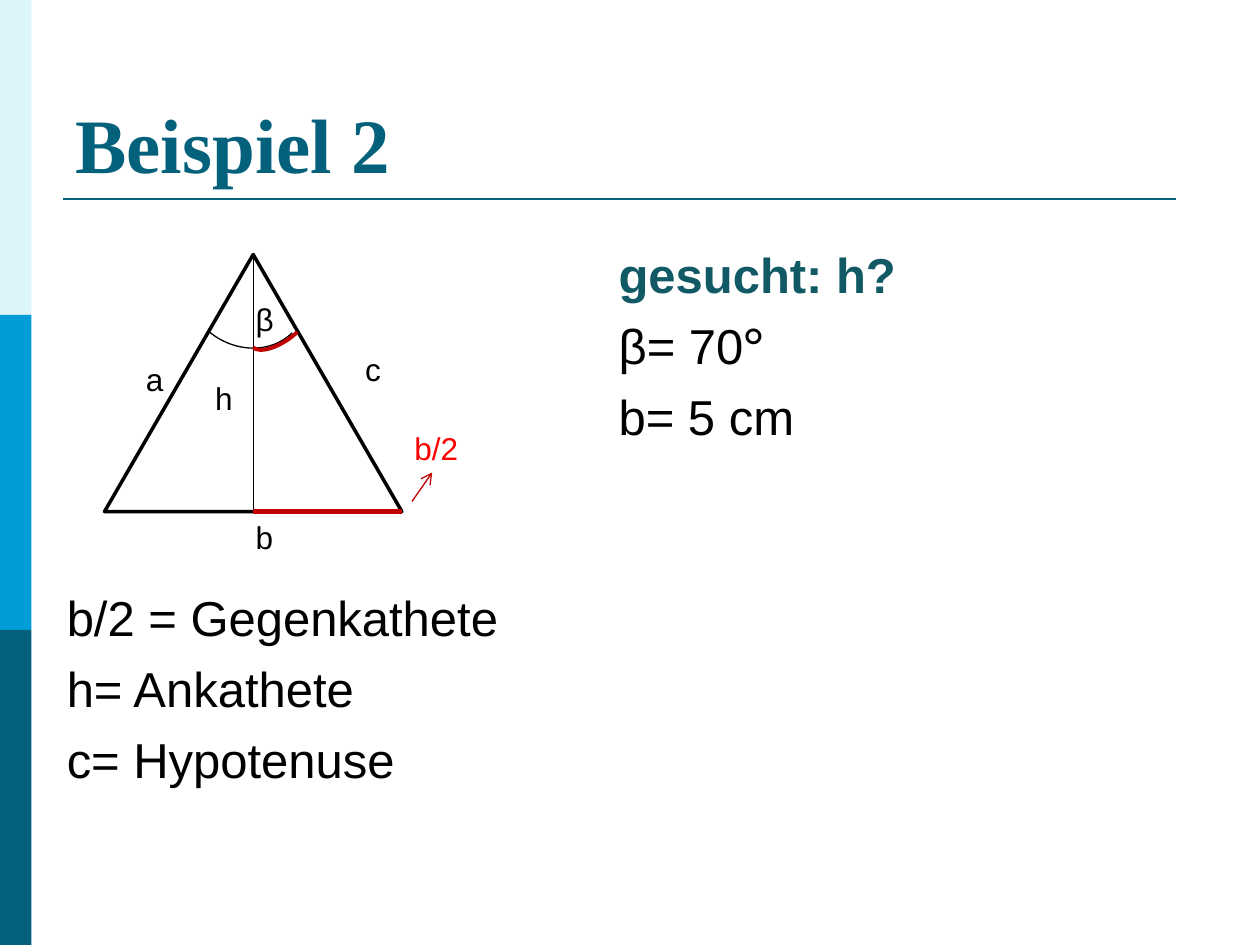
from pptx import Presentation
from pptx.dml.color import RGBColor
from pptx.enum.shapes import MSO_CONNECTOR as Connector, MSO_SHAPE as Shape
from pptx.enum.text import MSO_ANCHOR as Anchor, MSO_AUTO_SIZE as AutoSize, PP_ALIGN as Align
from pptx.oxml.ns import qn
from pptx.util import Inches, Pt
from lxml.etree import SubElement

COLORS = {
    "pale": "DBF5F9", "blue": "009DD9", "petrol": "04617B", "teal": "115964",
    "black": "000000", "dark_red": "C00000", "red": "FF0000",
}
TITLE = "Beispiel 2"
SOUGHT = [
    [("gesucht: h?", {"color": "teal", "bold": True})],
    [("β= 70", {}), ("°", {"font": "Lato"})],
    [("b= 5 cm", {})],
]
SIDES = [[("b/2 = Gegenkathete", {})], [("h= Ankathete", {})], [("c= Hypotenuse", {})]]
LABELS = [
    ("b", 1.93, 4.06, 0.39, "black"),
    ("a", 1.06, 2.81, 0.39, "black"),
    ("c", 2.8, 2.73, 0.39, "black"),
    ("h", 1.61, 2.96, 0.31, "black"),
    ("b/2", 3.19, 3.36, 0.63, "red"),
    ("β", 1.93, 2.33, 0.39, "black"),
]
STRIPES = ["pale", "blue", "petrol"]
LEFT, TOP, WIDTH, HEIGHT = 0.83, 2.02, 2.36, 2.04
MIDDLE, RIGHT, BASE = LEFT + WIDTH / 2, LEFT + WIDTH, TOP + HEIGHT
LINES = [
    ((0.5, 1.58), (9.33, 1.58), "petrol", 1.5, False),
    ((MIDDLE, TOP), (MIDDLE, BASE), "black", 0.75, False),
    ((MIDDLE, BASE), (RIGHT, BASE), "dark_red", 3, False),
    ((3.27, 3.98), (3.43, 3.75), "dark_red", 0.75, True),
]
ARCS = [
    ((1.5, 1.78, 0.9, 1.02), 127.6, (165.61, 1.51), "black", 0.75),
    ((1.95, 2.47, 0.55, 0.24), 144.7, (140.45, 214.47), "dark_red", 2.25),
]


def rgb(name):
    """Return the named colour."""
    return RGBColor.from_string(COLORS[name])


def add_run(paragraph, text, size=28, font="Arial", color="black", bold=False):
    """Add formatted text to a paragraph."""
    run = paragraph.add_run()
    run.text = text
    run.font.size, run.font.name, run.font.bold = Pt(size), font, bold
    run.font.color.rgb = rgb(color)


def place(shape, left, top, width, height):
    """Move and size a shape in inches."""
    shape.left, shape.top = Inches(left), Inches(top)
    shape.width, shape.height = Inches(width), Inches(height)


def fill_list(placeholder, paragraphs, box):
    """Write unbulleted paragraphs into a body placeholder."""
    place(placeholder, *box)
    frame = placeholder.text_frame
    frame.auto_size, frame.vertical_anchor = AutoSize.NONE, Anchor.TOP
    for index, runs in enumerate(paragraphs):
        paragraph = frame.add_paragraph() if index else frame.paragraphs[0]
        paragraph.space_before, paragraph.space_after = Pt(0), Pt(7)
        properties = paragraph._p.get_or_add_pPr()
        properties.set("marL", "0")
        properties.set("indent", "0")
        SubElement(properties, qn("a:buNone"))
        for text, style in runs:
            add_run(paragraph, text, **style)


def add_outline(slide, kind, box, color, width, fill=None):
    """Add a preset shape with an optional fill and outline."""
    shape = slide.shapes.add_shape(kind, *map(Inches, box))
    shape.shadow.inherit = False
    if fill:
        shape.fill.solid()
        shape.fill.fore_color.rgb = rgb(fill)
    else:
        shape.fill.background()
    if color:
        shape.line.color.rgb, shape.line.width = rgb(color), Pt(width)
    else:
        shape.line.fill.background()
    return shape


def add_line(slide, start, end, color, width, arrow):
    """Add a straight line, with an arrowhead if asked."""
    line = slide.shapes.add_connector(Connector.STRAIGHT, *map(Inches, start + end))
    line.line.color.rgb, line.line.width = rgb(color), Pt(width)
    if arrow:
        SubElement(line.line._get_or_add_ln(), qn("a:tailEnd"), type="arrow")
    SubElement(line._element.spPr, qn("a:effectLst"))


def main():
    """Build and save the slide."""
    presentation = Presentation()
    presentation.slide_width, presentation.slide_height = Inches(10), Inches(7.5)
    slide = presentation.slides.add_slide(presentation.slide_layouts[3])

    title, left_body, right_body = list(slide.placeholders)[:3]
    place(title, 0.5, 0.3, 9, 1.25)
    title.text_frame.auto_size = AutoSize.NONE
    title.text_frame.vertical_anchor = Anchor.BOTTOM
    heading = title.text_frame.paragraphs[0]
    heading.alignment = Align.LEFT
    add_run(heading, TITLE, size=44, font="Times New Roman", color="petrol", bold=True)
    fill_list(left_body, SIDES, (0.43, 4.61, 4.3, 2.5))
    fill_list(right_body, SOUGHT, (4.81, 1.89, 4.62, 2.5))

    for index, color in enumerate(STRIPES):
        add_outline(slide, Shape.RECTANGLE, (0, 2.5 * index, 0.25, 2.5), None, 0, color)
    add_outline(slide, Shape.ISOSCELES_TRIANGLE, (LEFT, TOP, WIDTH, HEIGHT), "black", 2)
    for line in LINES:
        add_line(slide, *line)
    for box, rotation, angles, color, width in ARCS:
        arc = add_outline(slide, Shape.ARC, box, color, width)
        arc.rotation = rotation
        arc.adjustments[0], arc.adjustments[1] = angles
    for text, left, top, width, color in LABELS:
        label = slide.shapes.add_textbox(*map(Inches, (left, top, width, 0.4)))
        label.text_frame.word_wrap = True
        add_run(label.text_frame.paragraphs[0], text, size=18, color=color)

    presentation.save("out.pptx")


if __name__ == "__main__":
    main()
